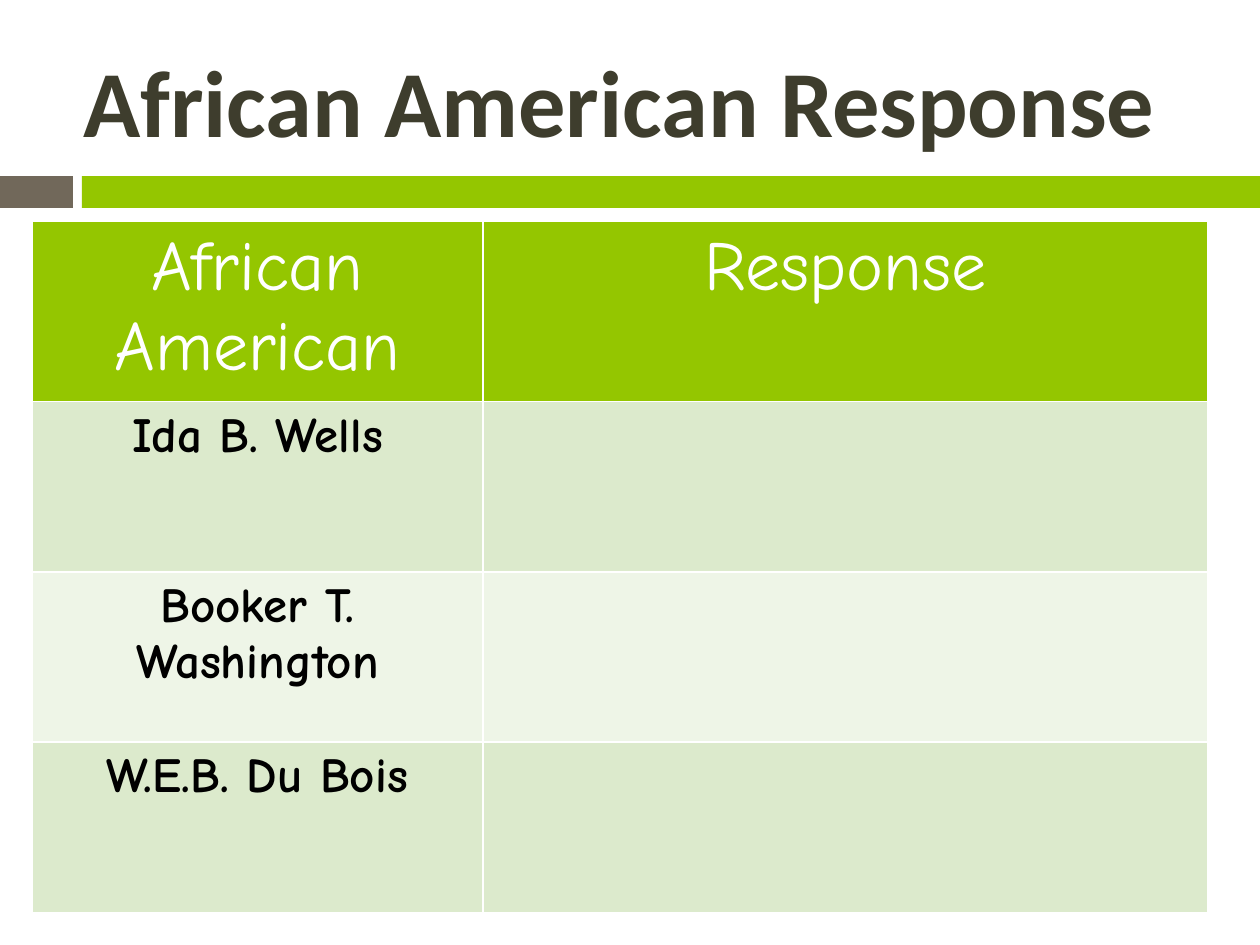
from dataclasses import dataclass

from lxml.etree import SubElement
from pptx import Presentation
from pptx.dml.color import RGBColor
from pptx.enum.shapes import MSO_SHAPE
from pptx.enum.text import MSO_ANCHOR, PP_ALIGN
from pptx.oxml.ns import qn
from pptx.util import Emu, Pt

PX_PER_INCH = 126


@dataclass(frozen=True)
class Theme:
    title_font: str = "Calibri"
    table_font: str = "Comic Neue"
    title_size: int = 54
    header_size: int = 40
    name_size: int = 28
    border_width: int = 1
    title_color: str = "3E3D2D"
    accent: str = "94C600"
    stone: str = "71685A"
    white: str = "FFFFFF"
    black: str = "000000"
    bands: tuple = ("DCEACC", "EEF5E7")


THEME = Theme()
HEADINGS = ("African American", "Response")
LEADERS = ("Ida B. Wells", "Booker T. Washington", "W.E.B. Du Bois")


def px(length):
    return Emu(round(length * 914400 / PX_PER_INCH))


def color(value):
    return RGBColor.from_string(value)


def style_text(paragraph, font, size, ink, bold):
    paragraph.alignment = PP_ALIGN.CENTER
    paragraph.font.name = font
    paragraph.font.size = Pt(size)
    paragraph.font.color.rgb = color(ink)
    paragraph.font.bold = bold


def add_title(slide, left, top, width, height):
    title = slide.shapes.add_textbox(*map(px, (left, top, width, height)))
    frame = title.text_frame
    frame.word_wrap = True
    frame.vertical_anchor = MSO_ANCHOR.MIDDLE
    heading = frame.paragraphs[0]
    heading.text = "African American Response "
    style_text(heading, THEME.title_font, THEME.title_size, THEME.title_color, True)


def add_divider(slide, left, top, width, height):
    """Draw a short stone block and a long accent bar with a gap between."""
    block_width, gap = 73, 9
    bar_offset = block_width + gap
    for offset, length, fill in (
        (0, block_width, THEME.stone),
        (bar_offset, width - bar_offset, THEME.accent),
    ):
        bar = slide.shapes.add_shape(
            MSO_SHAPE.RECTANGLE, *map(px, (left + offset, top, length, height))
        )
        bar.shadow.inherit = False
        bar.fill.solid()
        bar.fill.fore_color.rgb = color(fill)
        bar.line.fill.background()


def paint_cell(cell, fill):
    """Give the cell its borders, then its fill, in schema order."""
    properties = cell._tc.get_or_add_tcPr()
    for side in ("a:lnL", "a:lnR", "a:lnT", "a:lnB"):
        border = SubElement(properties, qn(side), w=str(Pt(THEME.border_width)))
        solid = SubElement(border, qn("a:solidFill"))
        SubElement(solid, qn("a:srgbClr"), val=THEME.white)
    cell.fill.solid()
    cell.fill.fore_color.rgb = color(fill)


def add_response_table(slide, left, top, width, height):
    rows = [HEADINGS] + [(leader, "") for leader in LEADERS]
    table = slide.shapes.add_table(
        len(rows), len(HEADINGS), *map(px, (left, top, width, height))
    ).table
    name_width = 451
    table.columns[0].width = px(name_width)
    table.columns[1].width = px(width - name_width)
    for row_index, row in enumerate(rows):
        is_header = row_index == 0
        table.rows[row_index].height = px(height / len(rows))
        fill = THEME.accent if is_header else THEME.bands[(row_index - 1) % 2]
        size = THEME.header_size if is_header else THEME.name_size
        ink = THEME.white if is_header else THEME.black
        for column_index, wording in enumerate(row):
            cell = table.cell(row_index, column_index)
            paint_cell(cell, fill)
            if wording:
                cell.text = wording
                style_text(cell.text_frame.paragraphs[0], THEME.table_font,
                           size, ink, not is_header)


def main():
    presentation = Presentation()
    presentation.slide_width = px(1260)
    presentation.slide_height = px(945)
    slide = presentation.slides.add_slide(presentation.slide_layouts[6])
    add_divider(slide, 0, 176, 1260, 32)
    add_title(slide, 21, 32, 1218, 136)
    add_response_table(slide, 32, 221, 1176, 681)
    presentation.save("out.pptx")


if __name__ == "__main__":
    main()
